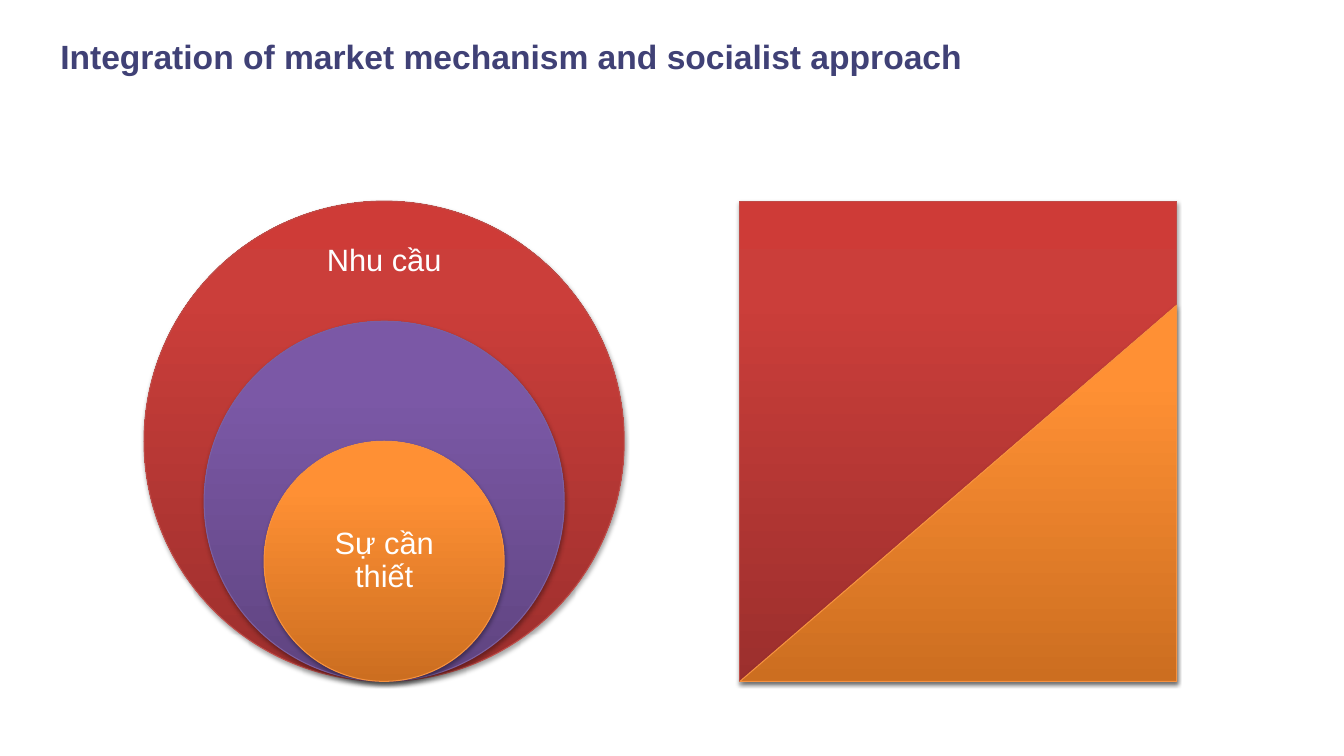
from lxml import etree
from pptx import Presentation
from pptx.dml.color import RGBColor
from pptx.enum.shapes import MSO_SHAPE
from pptx.enum.text import MSO_ANCHOR, PP_ALIGN
from pptx.oxml import parse_xml
from pptx.oxml.ns import nsdecls, qn
from pptx.util import Pt

OVAL, RECTANGLE, TRIANGLE = MSO_SHAPE.OVAL, MSO_SHAPE.RECTANGLE, MSO_SHAPE.ISOSCELES_TRIANGLE
MIDDLE = MSO_ANCHOR.MIDDLE
LEFT, CENTER = PP_ALIGN.LEFT, PP_ALIGN.CENTER

FONT = "Arial"
NAVY = RGBColor(0x40, 0x41, 0x76)
WHITE = RGBColor(0xFF, 0xFF, 0xFF)

# Each scheme: gradient colours at 0, 80 and 100 %, then the outline
STOPS = (0, 80, 100)
RED = ([RGBColor(0x9C, 0x2F, 0x2D), RGBColor(0xCB, 0x3E, 0x3A), RGBColor(0xCE, 0x3B, 0x37)],
       RGBColor(0xBF, 0x4C, 0x48))
PURPLE = ([RGBColor(0x5F, 0x44, 0x80), RGBColor(0x7B, 0x58, 0xA6), RGBColor(0x7C, 0x57, 0xA8)],
          RGBColor(0x7D, 0x60, 0xA0))
ORANGE = ([RGBColor(0xCC, 0x6E, 0x20), RGBColor(0xFF, 0x90, 0x34), RGBColor(0xFF, 0x91, 0x36)],
          RGBColor(0xF6, 0x92, 0x40))

TITLE = "Integration of market mechanism and socialist approach"
NEED_LABEL = "Nhu cầu"
NECESSITY_LABEL = "Sự cần thiết"
CIRCLES = [(1, RED), (0.75, PURPLE), (0.5, ORANGE)]  # share of the full diameter

DIAGRAM_TOP, DIAGRAM_HEIGHT = 143.7, 343
DIAGRAM_BOTTOM = DIAGRAM_TOP + DIAGRAM_HEIGHT
CIRCLES_CENTER = 274.4
PANEL_LEFT, PANEL_WIDTH = 528.5, 312
TRIANGLE_HEIGHT = 268.7

presentation = Presentation()
presentation.slide_width, presentation.slide_height = Pt(960), Pt(540)
slide = presentation.slides.add_slide(presentation.slide_layouts[6])


def add_glossy(preset, left, width, height, scheme):
    """Add a gradient shape with a soft shadow, standing on the diagram's bottom line."""
    colors, outline = scheme
    shape = slide.shapes.add_shape(preset, Pt(left), Pt(DIAGRAM_BOTTOM - height),
                                   Pt(width), Pt(height))
    shape.fill.gradient()
    shape.fill.gradient_angle = 90
    properties = shape.fill._xPr
    stops = properties.find(qn("a:gradFill")).find(qn("a:gsLst"))
    for stop in list(stops):
        stops.remove(stop)
    for position, color in zip(STOPS, colors):
        stop = etree.SubElement(stops, qn("a:gs"), pos=str(position * 1000))
        etree.SubElement(stop, qn("a:srgbClr"), val=str(color))
    shape.line.color.rgb = outline
    shape.line.width = Pt(0.75)
    shape.shadow.inherit = False
    properties.find(qn("a:effectLst")).append(parse_xml(
        f'<a:outerShdw {nsdecls("a")} blurRad="{Pt(3.15)}" dist="{Pt(1.8)}" dir="5400000" '
        'rotWithShape="0"><a:srgbClr val="000000"><a:alpha val="35000"/></a:srgbClr>'
        '</a:outerShdw>'))
    return shape


def add_text(text, left, top, width, height, size, color, align, bold=False,
             inset_x=7.2, inset_y=3.6, spacing=1.0):
    box = slide.shapes.add_textbox(Pt(left), Pt(top), Pt(width), Pt(height))
    frame = box.text_frame
    frame.text = text
    frame.word_wrap = True
    frame.vertical_anchor = MIDDLE
    frame.margin_left = frame.margin_right = Pt(inset_x)
    frame.margin_top = frame.margin_bottom = Pt(inset_y)
    paragraph = frame.paragraphs[0]
    paragraph.alignment = align
    paragraph.line_spacing = spacing
    font = paragraph.runs[0].font
    font.name, font.size, font.bold = FONT, Pt(size), bold
    font.color.rgb = color


def add_circle_label(text, top, height):
    width = 120
    add_text(text, CIRCLES_CENTER - width / 2, top, width, height, 22, WHITE, CENTER,
             inset_x=12.3, inset_y=12.3, spacing=0.9)


add_text(TITLE, 36, 16.6, 728, 47.5, 24, NAVY, LEFT, bold=True)

for share, scheme in CIRCLES:
    diameter = DIAGRAM_HEIGHT * share
    add_glossy(OVAL, CIRCLES_CENTER - diameter / 2, diameter, diameter, scheme)
add_circle_label(NEED_LABEL, 160.8, 51.4)
add_circle_label(NECESSITY_LABEL, 358, 85.7)

add_glossy(RECTANGLE, PANEL_LEFT, PANEL_WIDTH, DIAGRAM_HEIGHT, RED)
wedge = add_glossy(TRIANGLE, PANEL_LEFT, PANEL_WIDTH, TRIANGLE_HEIGHT, ORANGE)
wedge.adjustments[0] = 1

presentation.save("out.pptx")
